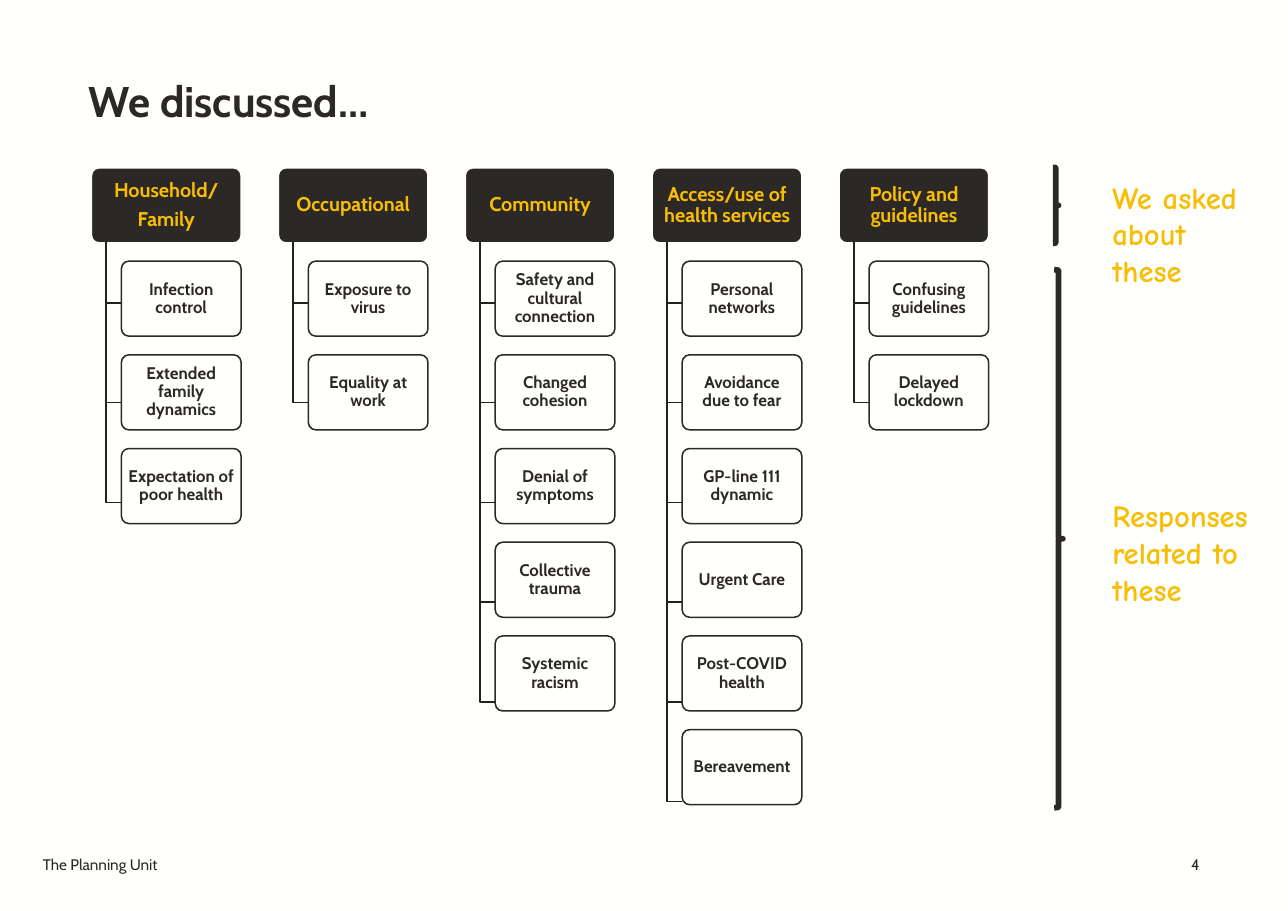
import pptx
import pptx.util
import pptx.dml.color
import pptx.enum.shapes
import pptx.enum.text
import pptx.oxml.ns
import lxml.etree

Cm, Pt = pptx.util.Cm, pptx.util.Pt
Align = pptx.enum.text.PP_ALIGN
Anchor = pptx.enum.text.MSO_ANCHOR
Shape = pptx.enum.shapes.MSO_SHAPE

# Content
TITLE = "We discussed…"
THEMES = [
    ("Household/\nFamily", ["Infection control", "Extended family dynamics",
                            "Expectation of poor health"]),
    ("Occupational", ["Exposure to virus", "Equality at work"]),
    ("Community", ["Safety and cultural connection", "Changed cohesion",
                   "Denial of symptoms", "Collective trauma",
                   "Systemic racism"]),
    ("Access/use of health services", ["Personal networks",
                                       "Avoidance due to fear",
                                       "GP-line 111 dynamic", "Urgent Care",
                                       "Post-COVID health", "Bereavement"]),
    ("Policy and guidelines", ["Confusing guidelines", "Delayed lockdown"]),
]
# Text, left, top, width, height
NOTES = [
    ("We asked about these", 25.4, 3.99, 3.91, 1.96),
    ("Responses related to these", 25.4, 11.33, 3.91, 2.82),
]
FOOTS = [
    ("4", 25.86, 19.51, 2, 1.02, Align.RIGHT),
    ("The Planning Unit", 0.79, 19.51, 3.6, 1.02, Align.LEFT),
]
BRACES = [(24.28, 3.86, 0.13, 1.75), (24.31, 6.22, 0.2, 12.4)]
COLORS = {"dark": "2C2825", "stem": "23201E", "gold": "F8BE05",
          "paper": "FFFFFE"}

# Grid, in cm
LEFT, PITCH = 2.11, 4.31
HEAD_TOP, HEAD_W, BOX_H = 3.87, 3.45, 1.73
ITEM_IN, ITEM_TOP, ITEM_W, ITEM_STEP = 0.69, 6.02, 2.76, 2.16
STEM_IN, STEM_TOP, ELBOW_TOP, ELBOW_STEP = 0.34, 5.59, 6.98, 2.3


def color(name):
    return pptx.dml.color.RGBColor.from_string(COLORS[name])


def place(left, top, width, height):
    return Cm(left), Cm(top), Cm(width), Cm(height)


def outline(shape, name, width):
    shape.shadow.inherit = False
    shape.line.color.rgb = color(name)
    shape.line.width = Pt(width)


def write(frame, text, size, ink, bold=False, align=Align.LEFT, font="Cabin"):
    frame.word_wrap = True
    frame.text = text
    for para in frame.paragraphs:
        para.alignment = align
        para.font.name = font
        para.font.size = Pt(size)
        para.font.bold = bold
        para.font.color.rgb = color(ink)


def inset(frame, side, edge):
    frame.margin_left = frame.margin_right = Cm(side)
    frame.margin_top = frame.margin_bottom = Cm(edge)


def add_box(slide, area, text, size, fill, line, ink):
    box = slide.shapes.add_shape(Shape.ROUNDED_RECTANGLE, *place(*area))
    box.adjustments[0] = 0.1
    box.fill.solid()
    box.fill.fore_color.rgb = color(fill)
    outline(box, line, 1)
    frame = box.text_frame
    write(frame, text, size, ink, True, Align.CENTER)
    frame.vertical_anchor = Anchor.MIDDLE
    inset(frame, 0.11, 0.1)
    for para in frame.paragraphs:
        para.line_spacing = 0.9
        para.space_after = Pt(round(size * 0.35, 1))
    return box


def add_elbow(slide, left, right, bottom):
    path = slide.shapes.build_freeform(Cm(left), Cm(STEM_TOP))
    path.add_line_segments([(Cm(left), Cm(bottom)), (Cm(right), Cm(bottom))],
                           close=False)
    elbow = path.convert_to_shape()
    elbow.fill.background()
    outline(elbow, "stem", 1)


def fade(shape, percent):
    tone = shape.fill._xPr.find(".//" + pptx.oxml.ns.qn("a:srgbClr"))
    alpha = lxml.etree.SubElement(tone, pptx.oxml.ns.qn("a:alpha"))
    alpha.set("val", str(percent * 1000))


def main():
    deck = pptx.Presentation()
    deck.slide_width, deck.slide_height = Cm(29.7), Cm(21)
    slide = deck.slides.add_slide(deck.slide_layouts[5])
    slide.background.fill.solid()
    slide.background.fill.fore_color.rgb = color("paper")

    # Title
    title = slide.shapes.title
    title.left, title.top, title.width, title.height = place(
        1.85, 1.09, 26.01, 2.01)
    write(title.text_frame, TITLE, 28, "dark", True)
    title.text_frame.vertical_anchor = Anchor.BOTTOM
    inset(title.text_frame, 0.2, 0.2)

    # Footer
    for text, *area, align in FOOTS:
        foot = slide.shapes.add_textbox(*place(*area))
        write(foot.text_frame, text, 10, "dark", align=align)
        inset(foot.text_frame, 0.2, 0.2)

    # Themes and the answers below them
    for col, (theme, items) in enumerate(THEMES):
        left = LEFT + col * PITCH
        add_box(slide, (left, HEAD_TOP, HEAD_W, BOX_H), theme, 13,
                "dark", "paper", "gold")
        for row, item in enumerate(items):
            add_elbow(slide, left + STEM_IN, left + ITEM_IN,
                      ELBOW_TOP + row * ELBOW_STEP)
            area = (left + ITEM_IN, ITEM_TOP + row * ITEM_STEP, ITEM_W, BOX_H)
            box = add_box(slide, area, item, 11, "paper", "dark", "dark")
            fade(box, 90)

    # Braces and notes on the right
    for area in BRACES:
        brace = slide.shapes.add_shape(Shape.RIGHT_BRACE, *place(*area))
        brace.fill.background()
        outline(brace, "dark", 3.75)
    for text, *area in NOTES:
        note = slide.shapes.add_textbox(*place(*area))
        write(note.text_frame, text, 20, "gold", True, font="Comic Neue")

    deck.save("out.pptx")


if __name__ == "__main__":
    main()
